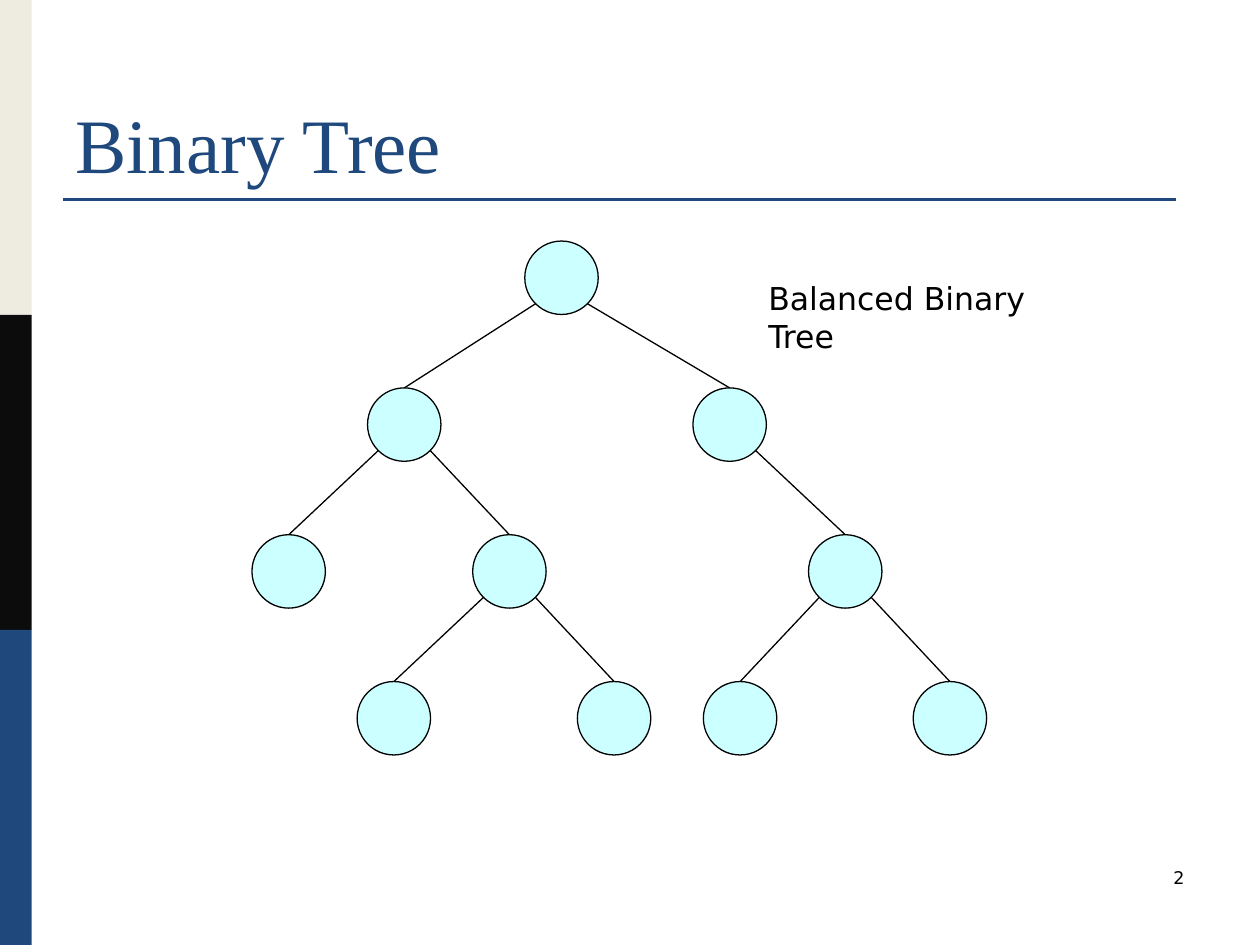
from math import sqrt

from lxml import etree
from pptx import Presentation
from pptx.dml.color import RGBColor
from pptx.enum.shapes import MSO_CONNECTOR, MSO_SHAPE
from pptx.enum.text import MSO_ANCHOR, PP_ALIGN
from pptx.oxml.ns import qn
from pptx.util import Cm, Pt

RECTANGLE, OVAL = MSO_SHAPE.RECTANGLE, MSO_SHAPE.OVAL
STRAIGHT = MSO_CONNECTOR.STRAIGHT
TOP, BOTTOM = MSO_ANCHOR.TOP, MSO_ANCHOR.BOTTOM
LEFT, RIGHT = PP_ALIGN.LEFT, PP_ALIGN.RIGHT

SLIDE_WIDTH, SLIDE_HEIGHT = 25.4, 19.05
NAVY, BLACK, NODE_FILL = "1F497D", "000000", "CCFFFF"
SERIF, SANS = "Times New Roman", "DejaVu Sans"

SIDE_BANDS = ["EEECE1", "0C0C0C", NAVY]
BAND_WIDTH = 0.64

TEXTS = [
    ("Binary Tree", (1.27, 0.76, 22.86, 3.18), SERIF, 44, NAVY, LEFT, BOTTOM),
    ("Balanced Binary Tree", (15.24, 5.5, 7.2, 1.03), SANS, 18, BLACK, LEFT, TOP),
    ("2", (18.2, 17.36, 5.93, 1.27), SANS, 10, BLACK, RIGHT, TOP),
]

NODE_SIZE = 1.48
ROOT_TOP, LEVEL_STEP = 4.86, 2.96
TREE = (11.32, [
    (8.15, [
        (5.82, []),
        (10.27, [(7.94, []), (12.38, [])]),
    ]),
    (14.71, [
        (17.04, [(14.92, []), (19.15, [])]),
    ]),
])


def color(value):
    return RGBColor.from_string(value)


def add_shape(slide, kind, box, fill, outline=None):
    shape = slide.shapes.add_shape(kind, *map(Cm, box))
    shape.shadow.inherit = False
    shape.fill.solid()
    shape.fill.fore_color.rgb = color(fill)
    if outline:
        shape.line.color.rgb = color(outline)
        shape.line.width = Pt(0.75)
    else:
        shape.line.fill.background()


def add_line(slide, start, end, stroke, width):
    line = slide.shapes.add_connector(STRAIGHT, *map(Cm, (*start, *end)))
    line.line.color.rgb = color(stroke)
    line.line.width = Pt(width)
    etree.SubElement(line._element.spPr, qn("a:effectLst"))


def add_text(slide, text, box, font, size, ink, align, anchor):
    frame = slide.shapes.add_textbox(*map(Cm, box)).text_frame
    frame.word_wrap = True
    frame.vertical_anchor = anchor
    paragraph = frame.paragraphs[0]
    paragraph.alignment = align
    run = paragraph.add_run()
    run.text = text
    run.font.name = font
    run.font.size = Pt(size)
    run.font.color.rgb = color(ink)


def add_tree(slide, node, level=0):
    center, children = node
    radius = NODE_SIZE / 2
    top = ROOT_TOP + level * LEVEL_STEP
    reach = radius / sqrt(2)
    for child in children:
        side = 1 if child[0] > center else -1
        start = (center + side * reach, top + radius + reach)
        add_line(slide, start, (child[0], top + LEVEL_STEP), BLACK, 0.75)
        add_tree(slide, child, level + 1)
    add_shape(slide, OVAL, (center - radius, top, NODE_SIZE, NODE_SIZE), NODE_FILL, BLACK)


def main():
    deck = Presentation()
    deck.slide_width, deck.slide_height = Cm(SLIDE_WIDTH), Cm(SLIDE_HEIGHT)
    slide = deck.slides.add_slide(deck.slide_layouts[6])

    band_height = SLIDE_HEIGHT / len(SIDE_BANDS)
    for index, fill in enumerate(SIDE_BANDS):
        add_shape(slide, RECTANGLE, (0, index * band_height, BAND_WIDTH, band_height), fill)
    add_line(slide, (1.27, 4.02), (23.7, 4.02), NAVY, 1.5)

    add_tree(slide, TREE)
    for entry in TEXTS:
        add_text(slide, *entry)

    deck.save("out.pptx")


if __name__ == "__main__":
    main()
